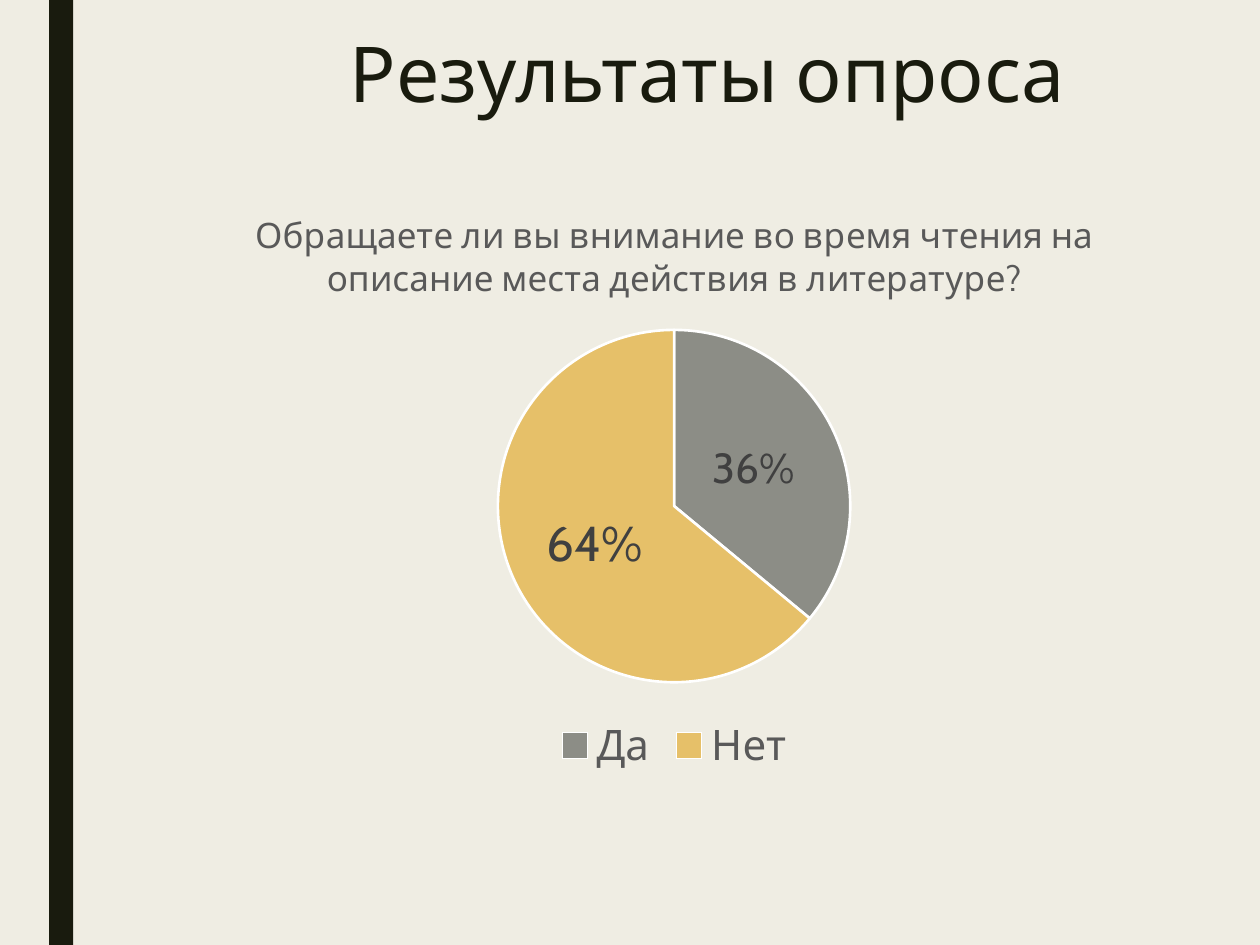
import pptx
import pptx.util
import pptx.dml.color
import pptx.chart.data
import pptx.enum.chart
import pptx.enum.shapes
import pptx.enum.text
import pptx.oxml

# Content
TITLE = "Результаты опроса"
QUESTION = "Обращаете ли вы внимание во время чтения на описание места действия в литературе?"
ANSWERS = [  # name, percent, colour, label size
    ("Да", 36, "gray", 24),
    ("Нет", 64, "gold", 28),
]
COLORS = {
    "background": "EFEDE3", "dark": "191B0E", "gray": "8C8D86", "gold": "E6C069",
    "text": "595959", "label": "404040", "white": "FFFFFF",
}
FONT = "Cabin"
WIDTH, HEIGHT = 10, 7.5

# Places as shares of the slide: left, top, width, height
STRIPE = (0.039, 0, 0.019, 1)
HEADING = (0.15, 0.032, 0.823, 0.143)
CHART = (0.098, 0.196, 0.874, 0.629)
# Pie as shares of the chart
PIE = {"x": 0.34, "y": 0.24, "w": 0.32, "h": 0.6}


def place(shares):
    return [pptx.util.Inches(share * side)
            for share, side in zip(shares, (WIDTH, HEIGHT) * 2)]


def color(name):
    return pptx.dml.color.RGBColor.from_string(COLORS[name])


def paint(fill, name):
    fill.solid()
    fill.fore_color.rgb = color(name)


def style(font, size, name):
    font.name = FONT
    font.size = pptx.util.Pt(size)
    font.bold = False
    font.color.rgb = color(name)


def pie_layout():
    modes = '<c:layoutTarget val="inner"/><c:xMode val="edge"/><c:yMode val="edge"/>'
    sides = "".join(f'<c:{side} val="{share}"/>' for side, share in PIE.items())
    return pptx.oxml.parse_xml(
        '<c:layout xmlns:c="http://schemas.openxmlformats.org/drawingml/2006/chart">'
        f"<c:manualLayout>{modes}{sides}</c:manualLayout></c:layout>")


deck = pptx.Presentation()
deck.slide_width = pptx.util.Inches(WIDTH)
deck.slide_height = pptx.util.Inches(HEIGHT)
page = deck.slides.add_slide(deck.slide_layouts[6])
paint(page.background.fill, "background")

# Side stripe
stripe = page.shapes.add_shape(pptx.enum.shapes.MSO_SHAPE.RECTANGLE, *place(STRIPE))
stripe.shadow.inherit = False
paint(stripe.fill, "dark")
stripe.line.fill.background()

# Survey pie
data = pptx.chart.data.CategoryChartData(number_format="0")
data.categories = [answer[0] for answer in ANSWERS]
data.add_series("Series 1", [answer[1] for answer in ANSWERS])
chart = page.shapes.add_chart(
    pptx.enum.chart.XL_CHART_TYPE.PIE, *place(CHART), data).chart
chart.font.name = FONT
chart.font.size = pptx.util.Pt(10)

chart.has_title = True
chart.chart_title.include_in_layout = False
question = chart.chart_title.text_frame.paragraphs[0]
question.text = QUESTION
style(question.font, 20, "text")

chart.has_legend = True
chart.legend.position = pptx.enum.chart.XL_LEGEND_POSITION.BOTTOM
chart.legend.include_in_layout = False
style(chart.legend.font, 24, "text")

plot = chart.plots[0]
plot.vary_by_categories = True
plot_area = chart.element.chart.plotArea
for layout in plot_area.xpath("c:layout"):
    plot_area.remove(layout)
plot_area.insert(0, pie_layout())

# Slices and their percent labels
series = plot.series[0]
labels = series.data_labels
labels.show_percentage = True
labels.show_value = False
labels.position = pptx.enum.chart.XL_LABEL_POSITION.CENTER
style(labels.font, 9, "label")
for index, (_, _, fill, size) in enumerate(ANSWERS):
    point = series.points[index]
    paint(point.format.fill, fill)
    point.format.line.color.rgb = color("white")
    point.format.line.width = pptx.util.Pt(1.5)
    style(point.data_label.font, size, "label")
    point.data_label.position = pptx.enum.chart.XL_LABEL_POSITION.CENTER
for tag, shown in (("showVal", "0"), ("showPercent", "1")):
    for flag in plot_area.xpath(f".//c:dLbl/c:{tag}"):
        flag.set("val", shown)

# Heading
box = page.shapes.add_textbox(*place(HEADING))
box.text_frame.word_wrap = True
box.text_frame.vertical_anchor = pptx.enum.text.MSO_ANCHOR.TOP
para = box.text_frame.paragraphs[0]
para.text = TITLE
para.alignment = pptx.enum.text.PP_ALIGN.CENTER
para.line_spacing = 0.89
style(para.font, 44, "dark")

deck.save("out.pptx")
